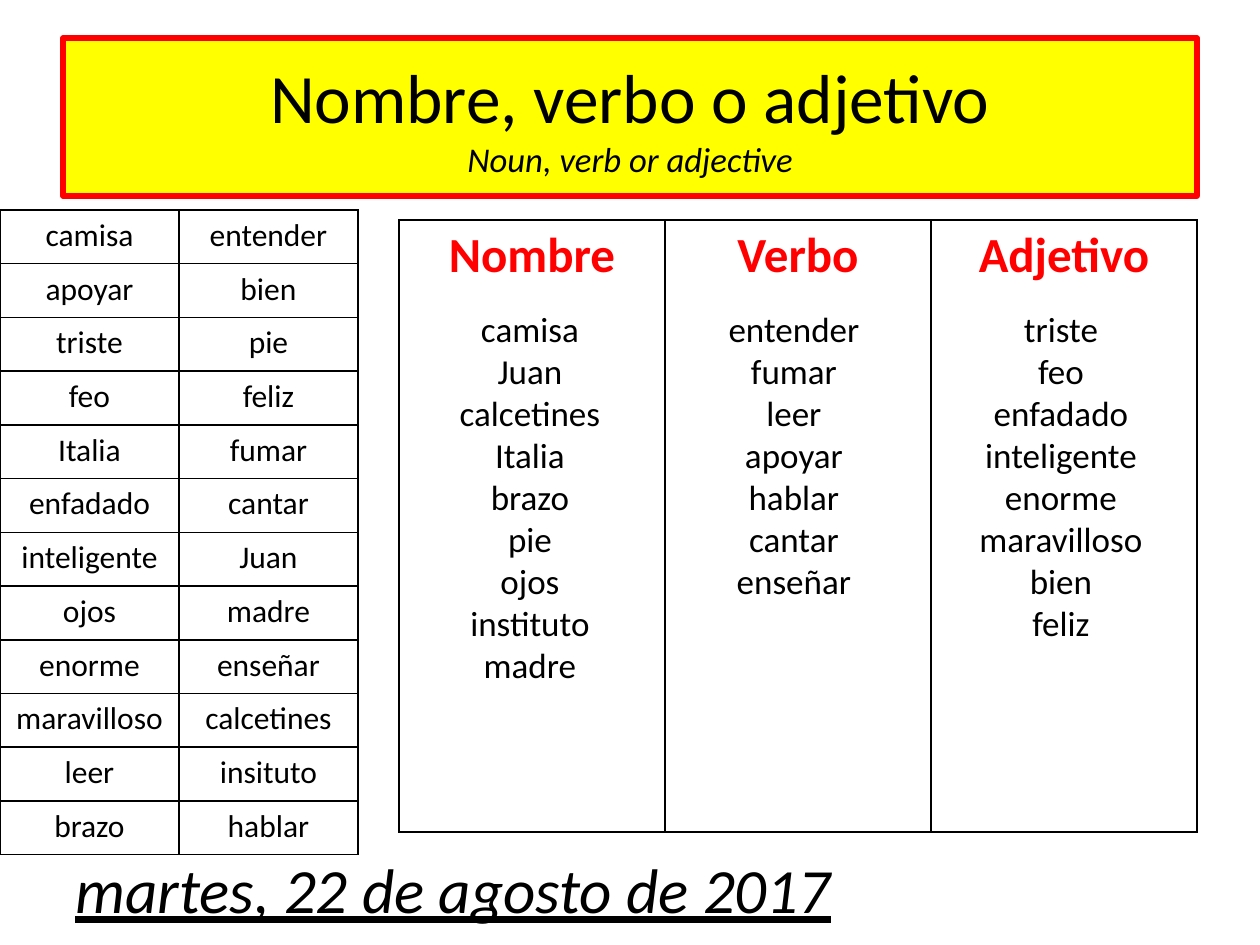
import pptx
import pptx.dml.color
import pptx.enum.text
import pptx.oxml
import pptx.oxml.ns
import pptx.util

PX = 914400 / 126
FONT = "Calibri"
BLACK = pptx.dml.color.RGBColor(0, 0, 0)
RED = pptx.dml.color.RGBColor(255, 0, 0)
YELLOW = pptx.dml.color.RGBColor(255, 255, 0)
CENTER = pptx.enum.text.PP_ALIGN.CENTER
LEFT = pptx.enum.text.PP_ALIGN.LEFT
MIDDLE = pptx.enum.text.MSO_ANCHOR.MIDDLE

WORD_COLUMNS = [
    ["camisa", "apoyar", "triste", "feo", "Italia", "enfadado", "inteligente",
     "ojos", "enorme", "maravilloso", "leer", "brazo"],
    ["entender", "bien", "pie", "feliz", "fumar", "cantar", "Juan",
     "madre", "enseñar", "calcetines", "insituto", "hablar"],
]
# Category: left edge and height of its answers, then the answers
ANSWERS = {
    "Nombre": (409, 394, ["camisa", "Juan", "calcetines", "Italia", "brazo",
                          "pie", "ojos", "instituto", "madre"]),
    "Verbo": (673, 310, ["entender", "fumar", "leer", "apoyar", "hablar",
                         "cantar", "enseñar"]),
    "Adjetivo": (940, 394, ["triste", "feo", "enfadado", "inteligente", "enorme",
                            "maravilloso", "bien", "feliz"]),
}


def box(left, top, width, height):
    """Turn px lengths into EMU."""
    return [pptx.util.Emu(round(length * PX)) for length in (left, top, width, height)]


def style_font(font, size, color=BLACK):
    font.name = FONT
    font.size = pptx.util.Pt(size)
    font.color.rgb = color


def set_geometry(shape, preset, adjustment):
    geometry = pptx.oxml.parse_xml(
        f'<a:prstGeom {pptx.oxml.ns.nsdecls("a")} prst="{preset}"><a:avLst>'
        f'<a:gd name="adj" fmla="val {adjustment}"/></a:avLst></a:prstGeom>')
    shape.element.spPr.find(pptx.oxml.ns.qn("a:xfrm")).addnext(geometry)


def format_title(title, heading, translation):
    title.left, title.top, title.width, title.height = box(63, 38, 1134, 158)
    set_geometry(title, "roundRect", 1500)
    title.fill.solid()
    title.fill.fore_color.rgb = YELLOW
    title.line.color.rgb = RED
    title.line.width = pptx.util.Pt(3)
    frame = title.text_frame
    frame.auto_size = pptx.enum.text.MSO_AUTO_SIZE.NONE
    frame.vertical_anchor = MIDDLE
    paragraph = frame.paragraphs[0]
    paragraph.alignment = CENTER
    heading_run = paragraph.add_run()
    heading_run.text = heading
    style_font(heading_run.font, 39.6)
    paragraph.add_line_break()
    translation_run = paragraph.add_run()
    translation_run.text = translation
    style_font(translation_run.font, 19.8)
    translation_run.font.italic = True


def add_borders(cell):
    properties = cell._tc.get_or_add_tcPr()
    for position, side in enumerate(("lnL", "lnR", "lnT", "lnB")):
        properties.insert(position, pptx.oxml.parse_xml(
            f'<a:{side} {pptx.oxml.ns.nsdecls("a")} w="12700"><a:solidFill>'
            f'<a:srgbClr val="{BLACK}"/></a:solidFill></a:{side}>'))


def add_grid(slide, rows, bounds, size, color=BLACK, bold=False):
    """Add a table of centred words with black borders and no fill."""
    table = slide.shapes.add_table(len(rows), len(rows[0]), *box(*bounds)).table
    table.first_row = False
    table.horz_banding = False
    for row_index, row in enumerate(rows):
        for column_index, word in enumerate(row):
            cell = table.cell(row_index, column_index)
            cell.text = word
            cell.fill.background()
            add_borders(cell)
            paragraph = cell.text_frame.paragraphs[0]
            paragraph.alignment = CENTER
            style_font(paragraph.font, size, color)
            paragraph.font.bold = bold


def add_text(slide, lines, bounds, size, alignment):
    frame = slide.shapes.add_textbox(*box(*bounds)).text_frame
    frame.word_wrap = True
    frame.text = "\n".join(lines)
    for paragraph in frame.paragraphs:
        paragraph.alignment = alignment
        style_font(paragraph.font, size)
    return frame


def add_date(slide, date):
    frame = add_text(slide, [date], (63, 850, 955, 76), 36, LEFT)
    frame.vertical_anchor = MIDDLE
    font = frame.paragraphs[0].font
    font.italic = True
    font.underline = True


def main():
    presentation = pptx.Presentation()
    presentation.slide_width = pptx.util.Inches(10)
    presentation.slide_height = pptx.util.Inches(7.5)
    slide = presentation.slides.add_slide(presentation.slide_layouts[5])

    format_title(slide.shapes.title, "Nombre, verbo o adjetivo", "Noun, verb or adjective")
    for index, words in enumerate(WORD_COLUMNS):
        add_grid(slide, [[word] for word in words], (index * 179, 210, 179, 645), 18)
    add_date(slide, "martes, 22 de agosto de 2017")
    add_grid(slide, [list(ANSWERS)], (399, 220, 798, 612), 28, RED, bold=True)
    for left, height, words in ANSWERS.values():
        frame = add_text(slide, words, (left, 301, 242, height), 20, CENTER)
        frame.auto_size = pptx.enum.text.MSO_AUTO_SIZE.SHAPE_TO_FIT_TEXT

    presentation.save("out.pptx")


if __name__ == "__main__":
    main()
